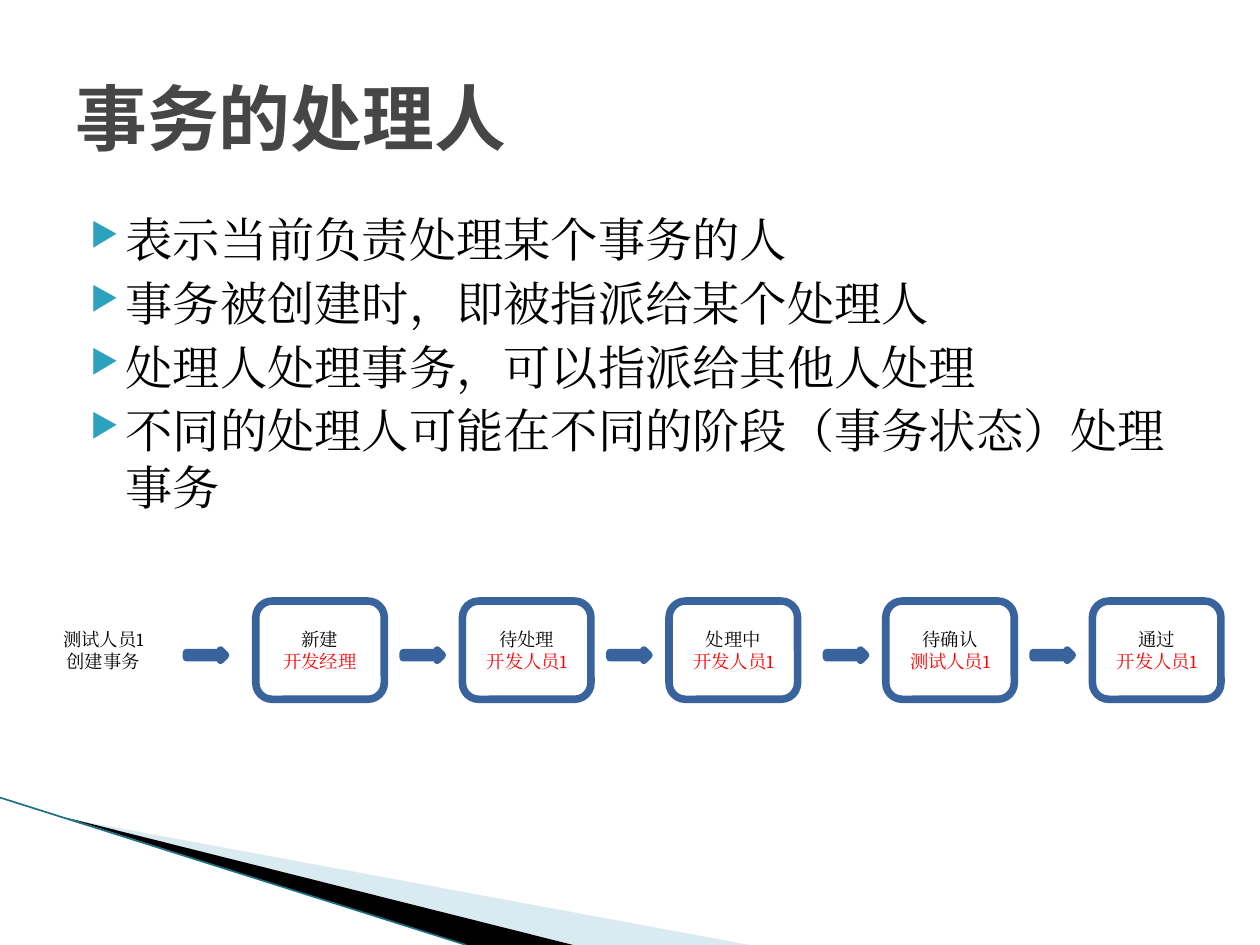
from lxml import etree
from pptx import Presentation
from pptx.dml.color import RGBColor
from pptx.enum.lang import MSO_LANGUAGE_ID
from pptx.enum.shapes import MSO_CONNECTOR, MSO_SHAPE
from pptx.enum.text import MSO_ANCHOR, PP_ALIGN
from pptx.oxml.ns import qn
from pptx.util import Inches, Pt

ROUNDED, ARROW = MSO_SHAPE.ROUNDED_RECTANGLE, MSO_SHAPE.RIGHT_ARROW
STRAIGHT = MSO_CONNECTOR.STRAIGHT
TOP, MIDDLE = MSO_ANCHOR.TOP, MSO_ANCHOR.MIDDLE
LEFT, CENTER = PP_ALIGN.LEFT, PP_ALIGN.CENTER
CHINESE = MSO_LANGUAGE_ID.SIMPLIFIED_CHINESE

COLORS = {
    "white": "FFFFFF", "ink": "000000", "title": "464646", "bullet": "2DA2BF",
    "flow": "39639D", "handler": "FF0000", "pale": "A0CBDC", "edge": "1B7186",
}
COLUMNS, ROWS = 100, 75
CELL = Inches(0.1)

POINTS = [
    "表示当前负责处理某个事务的人",
    "事务被创建时，即被指派给某个处理人",
    "处理人处理事务，可以指派给其他人处理",
    "不同的处理人可能在不同的阶段（事务状态）处理事务",
]
# Arrow column, box column, status, handler
STEPS = [
    (14.8, 20.3, "新建", "开发经理"),
    (32.0, 36.7, "待处理", "开发人员1"),
    (48.4, 53.1, "处理中", "开发人员1"),
    (65.6, 70.3, "待确认", "测试人员1"),
    (82.0, 86.7, "通过", "开发人员1"),
]
BOX_ROW, BOX_WIDTH, BOX_HEIGHT = 47.7, 10.2, 7.8
ARROW_ROW, ARROW_WIDTH, ARROW_HEIGHT = 51.6, 3.1, 0.8


def cells(*counts):
    return [round(count * CELL) for count in counts]


def rgb(name):
    return RGBColor.from_string(COLORS[name])


def set_bullet(paragraph, indent=0.28, margin=0.4):
    props = paragraph._p.get_or_add_pPr()
    props.set("marL", str(Inches(margin)))
    props.set("indent", str(-Inches(indent)))
    color = etree.SubElement(props, qn("a:buClr"))
    etree.SubElement(color, qn("a:srgbClr"), val=COLORS["bullet"])
    etree.SubElement(props, qn("a:buSzPct"), val="68000")
    etree.SubElement(props, qn("a:buChar"), char="▶")


def write(frame, paragraphs, *, size, font="Cambria", bold=False, anchor=TOP,
          align=LEFT, bullets=False, gap=0):
    """Fill a frame; each paragraph is a list of (text, colour) lines."""
    frame.word_wrap = True
    frame.vertical_anchor = anchor
    for index, lines in enumerate(paragraphs):
        paragraph = frame.add_paragraph() if index else frame.paragraphs[0]
        paragraph.alignment = align
        if index:
            paragraph.space_before = Pt(gap)
        if bullets:
            set_bullet(paragraph)
        for number, (text, color) in enumerate(lines):
            if number:
                paragraph.add_line_break()
            run = paragraph.add_run()
            run.text = text
            run.font.size, run.font.name, run.font.bold = Pt(size), font, bold
            run.font.color.rgb = rgb(color)
            run.font.language_id = CHINESE
            latin = run.font._element.find(qn("a:latin"))
            latin.addnext(latin.makeelement(qn("a:ea"), {"typeface": font}))


class SlideBuilder:
    """Draws on one slide, with places given in grid columns and rows."""

    def __init__(self, slide):
        self.shapes = slide.shapes

    def text(self, place, paragraphs, **style):
        box = self.shapes.add_textbox(*cells(*place))
        write(box.text_frame, paragraphs, **style)

    def shape(self, kind, place, lines=None, outlined=True):
        shape = self.shapes.add_shape(kind, *cells(*place))
        shape.shadow.inherit = False
        shape.fill.solid()
        shape.fill.fore_color.rgb = rgb("white")
        if outlined:
            shape.line.color.rgb = rgb("flow")
            shape.line.width = Pt(4.33)
        else:
            shape.line.fill.background()
        if lines:
            write(shape.text_frame, [lines], size=10.5, anchor=MIDDLE,
                  align=CENTER)

    def polygon(self, corners, color, opacity=100):
        start, *rest = [tuple(cells(*corner)) for corner in corners]
        builder = self.shapes.build_freeform(*start)
        builder.add_line_segments(rest, close=True)
        shape = builder.convert_to_shape()
        shape.shadow.inherit = False
        shape.fill.solid()
        shape.fill.fore_color.rgb = rgb(color)
        shape.line.fill.background()
        if opacity < 100:
            tint = shape._element.spPr.find(".//" + qn("a:srgbClr"))
            etree.SubElement(tint, qn("a:alpha"), val=str(opacity * 1000))

    def line(self, start, end, color, width):
        line = self.shapes.add_connector(STRAIGHT, *cells(*start, *end))
        line.line.color.rgb = rgb(color)
        line.line.width = Pt(width)
        etree.SubElement(line._element.spPr, qn("a:effectLst"))


def main():
    deck = Presentation()
    deck.slide_width, deck.slide_height = cells(COLUMNS, ROWS)
    page = SlideBuilder(deck.slides.add_slide(deck.slide_layouts[6]))

    page.polygon([(5.5, 65), (59.5, ROWS), (45.6, ROWS)], "pale", opacity=40)
    page.polygon([(5.3, 64.9), (45.5, ROWS), (37, ROWS)], "ink")
    page.line((0, 63.3), (37, ROWS), "edge", 0.95)

    page.text((5, 3, 90, 12.5), [[("事务的处理人", "title")]],
              size=41, font="Roboto", bold=True, anchor=MIDDLE)
    page.text((5, 16.2, 90, 49.5), [[(point, "ink")] for point in POINTS],
              size=27, bullets=True, gap=4)

    page.shape(ROUNDED, (3.1, BOX_ROW, BOX_WIDTH, BOX_HEIGHT),
               [("测试人员1创建事务", "ink")], outlined=False)
    for arrow_column, box_column, status, handler in STEPS:
        page.shape(ARROW, (arrow_column, ARROW_ROW, ARROW_WIDTH, ARROW_HEIGHT))
        page.shape(ROUNDED, (box_column, BOX_ROW, BOX_WIDTH, BOX_HEIGHT),
                   [(status, "ink"), (handler, "handler")])

    deck.save("out.pptx")


if __name__ == "__main__":
    main()
